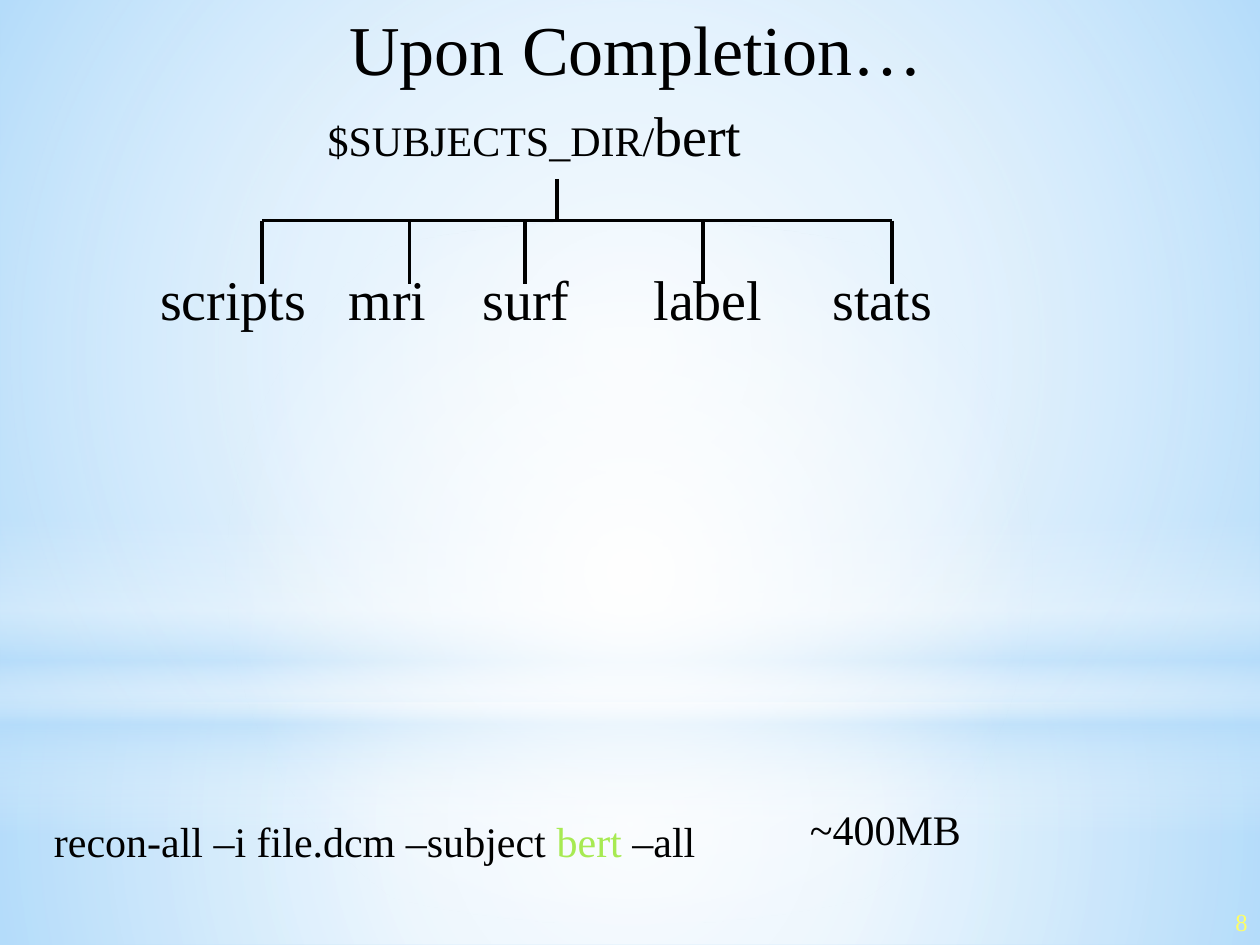
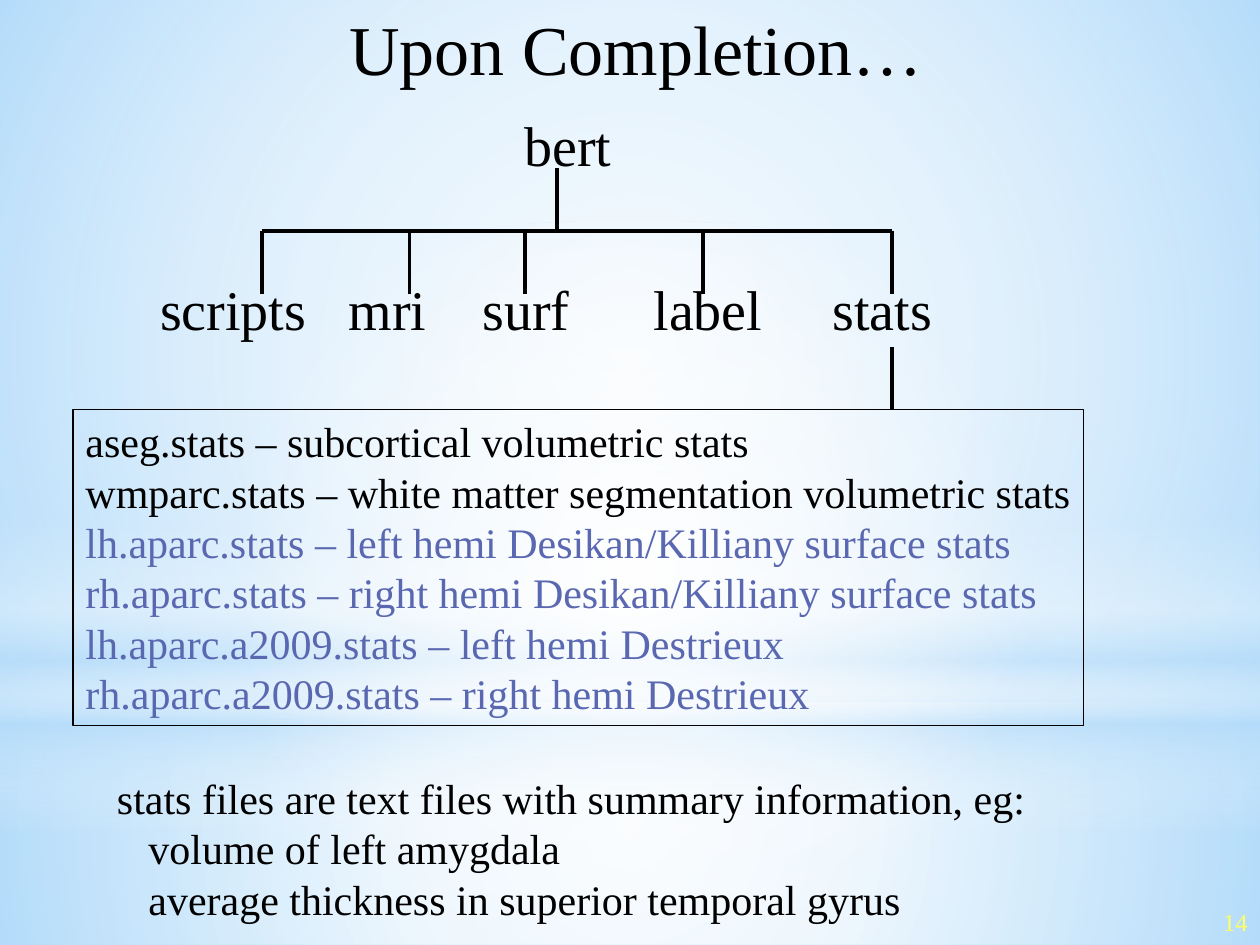
"""Build two slides that show the folder tree left by a completed reconstruction."""
from dataclasses import dataclass

import lxml.etree
import pptx
import pptx.dml.color
import pptx.enum.shapes
import pptx.enum.text
import pptx.oxml
import pptx.oxml.ns
import pptx.util

Inches = pptx.util.Inches
Shape = pptx.enum.shapes.MSO_SHAPE
Align = pptx.enum.text.PP_ALIGN
qn = pptx.oxml.ns.qn


@dataclass(frozen=True)
class Theme:
    font: str = "Times New Roman"
    ink: str = "000000"
    sky: str = "B4DCFA"
    white: str = "FFFFFF"
    subject: str = "A7EA52"
    surface: str = "5968B0"
    number: str = "FFFF66"
    title_size: int = 40
    folder_size: int = 32
    text_size: int = 24
    number_size: int = 14
    branch_width: float = 2.25
    frame_width: float = 0.75


theme = Theme()


def write(paragraph, *pieces, align=Align.LEFT):
    """Fill a paragraph with (text, size, colour) pieces."""
    paragraph.alignment = align
    paragraph.space_before = pptx.util.Pt(0)
    for text, size, colour in pieces:
        run = paragraph.add_run()
        run.text = text
        run.font.name = theme.font
        run.font.size = pptx.util.Pt(size)
        run.font.color.rgb = pptx.dml.color.RGBColor.from_string(colour)


def add_line(slide, x1, y1, x2, y2):
    """Draw one branch of the tree."""
    line = slide.shapes.add_connector(
        pptx.enum.shapes.MSO_CONNECTOR.STRAIGHT, Inches(x1), Inches(y1), Inches(x2), Inches(y2)
    )
    line.line.width = pptx.util.Pt(theme.branch_width)
    line.line.color.rgb = pptx.dml.color.RGBColor.from_string(theme.ink)
    lxml.etree.SubElement(line._element.spPr, qn("a:effectLst"))


presentation = pptx.Presentation()
presentation.slide_width = Inches(10)
presentation.slide_height = Inches(7.5)

master = presentation.slide_master
master.background.fill.solid()
master.background.fill.fore_color.rgb = pptx.dml.color.RGBColor.from_string(theme.sky)

radial = '<a:path path="circle"><a:fillToRect l="50000" t="50000" r="50000" b="50000"/></a:path>'
vertical = '<a:lin ang="5400000" scaled="0"/>'
white, sky = theme.white, theme.sky
backdrop = [
    (Shape.RECTANGLE, 5.58, 1.92, radial, [(0, white, 91), (37, white, 76), (100, sky, 79)]),
    (Shape.RECTANGLE, 0, 5.58, radial, [(0, white, 89), (48, white, 62), (100, sky, 79)]),
    (Shape.RECTANGLE, 4.12, 2.5, vertical,
     [(0, white, 0), (29, white, 30), (45, sky, 40), (55, white, 26), (65, sky, 60), (100, white, 0)]),
    (Shape.OVAL, 1.75, 5.58, radial, [(0, white, 100), (56, white, 0)]),
]

folders = ["scripts", "mri", "surf", "label", "stats"]
folder_indent = 1
extra_gap_points = [16, 24, 40, 32]
branch_xs = [2.08, 3.25, 4.17, 5.58, 7.08]
trunk_x = 4.42
drop = 0.5

trees = [
    {"number": "8", "body_top": 0.75, "root_indent": 2.33, "trunk_top": 1.42, "bar_y": 1.75,
     "root": [("$SUBJECTS_DIR/", theme.text_size, theme.ink), ("bert", theme.folder_size, theme.ink)]},
    {"number": "14", "body_top": 0.83, "root_indent": 3.89, "trunk_top": 1.33, "bar_y": 1.83,
     "root": [("bert", theme.folder_size, theme.ink)]},
]

slides = []
for tree in trees:
    slide = presentation.slides.add_slide(presentation.slide_layouts[1])
    slides.append(slide)

    number_box = slide.shapes.add_textbox(Inches(7.92), Inches(7.15), Inches(2.08), Inches(0.5))
    number_box.text_frame.word_wrap = True
    write(number_box.text_frame.paragraphs[0], (tree["number"], theme.number_size, theme.number),
          align=Align.RIGHT)

    title = slide.shapes.title
    title.left, title.top, title.width, title.height = map(Inches, (1.17, -0.25, 7.75, 1.25))
    title.text_frame.auto_size = pptx.enum.text.MSO_AUTO_SIZE.NONE
    title.text_frame.vertical_anchor = pptx.enum.text.MSO_ANCHOR.MIDDLE
    write(title.text_frame.paragraphs[0], ("Upon Completion…", theme.title_size, theme.ink),
          align=Align.CENTER)

    body = slide.placeholders[1]
    body.left, body.top, body.width, body.height = map(Inches, (0.17, tree["body_top"], 9.67, 3.74))
    body.text_frame.auto_size = pptx.enum.text.MSO_AUTO_SIZE.NONE
    root = body.text_frame.paragraphs[0]
    folder_row = body.text_frame.add_paragraph()
    for paragraph, indent in ((root, tree["root_indent"]), (folder_row, folder_indent)):
        properties = paragraph._p.get_or_add_pPr()
        properties.set("marL", str(Inches(indent)))
        properties.set("indent", "0")
        lxml.etree.SubElement(properties, qn("a:buNone"))
    write(root, *tree["root"])
    row_pieces = [(folders[0], theme.folder_size, theme.ink)]
    for folder in folders[1:]:
        row_pieces += [(" ", theme.folder_size, theme.ink), (folder, theme.folder_size, theme.ink)]
    write(folder_row, *row_pieces)
    folder_row.space_before = pptx.util.Pt(55)
    for gap, points in zip(folder_row.runs[1::2], extra_gap_points):
        gap._r.get_or_add_rPr().set("spc", str(points * 100))

    bar_y = tree["bar_y"]
    add_line(slide, trunk_x, tree["trunk_top"], trunk_x, bar_y)
    add_line(slide, branch_xs[0], bar_y, branch_xs[-1], bar_y)
    for x in branch_xs:
        add_line(slide, x, bar_y, x, bar_y + drop)

overview, stats_slide = slides

for layer, (kind, top, height, direction, stops) in enumerate(backdrop):
    panel = overview.shapes.add_shape(kind, 0, Inches(top), Inches(10), Inches(height))
    panel.shadow.inherit = False
    panel.line.fill.background()
    stop_xml = "".join(
        f'<a:gs pos="{position * 1000}"><a:srgbClr val="{colour}">'
        f'<a:alpha val="{alpha * 1000}"/></a:srgbClr></a:gs>'
        for position, colour, alpha in stops
    )
    gradient = pptx.oxml.parse_xml(
        f'<a:gradFill {pptx.oxml.ns.nsdecls("a")} rotWithShape="1">'
        f"<a:gsLst>{stop_xml}</a:gsLst>{direction}</a:gradFill>"
    )
    panel._element.spPr.find(qn("a:prstGeom")).addnext(gradient)
    master.shapes._spTree.insert(2 + layer, panel._element)

command = overview.shapes.add_textbox(Inches(0.33), Inches(6.42), Inches(5.58), Inches(0.51))
command.text_frame.word_wrap = True
write(command.text_frame.paragraphs[0],
      ("recon-all –i file.dcm –subject ", theme.text_size, theme.ink),
      ("bert ", theme.text_size, theme.subject),
      ("–all", theme.text_size, theme.ink))

disk_usage = overview.shapes.add_textbox(Inches(6.33), Inches(6.33), Inches(1.4), Inches(0.5))
disk_usage.text_frame.word_wrap = False
write(disk_usage.text_frame.paragraphs[0], ("~400MB", theme.text_size, theme.ink))

add_line(stats_slide, branch_xs[-1], 2.75, branch_xs[-1], 3.25)
stats_box = stats_slide.shapes.add_shape(
    Shape.RECTANGLE, Inches(0.58), Inches(3.25), Inches(8.02), Inches(2.51)
)
stats_box.shadow.inherit = False
stats_box.fill.background()
stats_box.line.width = pptx.util.Pt(theme.frame_width)
stats_box.line.color.rgb = pptx.dml.color.RGBColor.from_string(theme.ink)
stats_box.text_frame.vertical_anchor = pptx.enum.text.MSO_ANCHOR.TOP

notes_box = stats_slide.shapes.add_textbox(Inches(0.83), Inches(6.08), Inches(7.48), Inches(1.31))

stats_files = [
    ("aseg.stats – subcortical volumetric stats", theme.ink, 0),
    ("wmparc.stats – white matter segmentation volumetric stats", theme.ink, 0),
    ("lh.aparc.stats – left hemi Desikan/Killiany surface stats", theme.surface, 0),
    ("rh.aparc.stats – right hemi Desikan/Killiany surface stats", theme.surface, 0),
    ("lh.aparc.a2009.stats – left hemi Destrieux", theme.surface, 0),
    ("rh.aparc.a2009.stats – right hemi Destrieux", theme.surface, 0),
]
summary = [
    ("stats files are text files with summary information, eg:", theme.ink, 0),
    ("volume of left amygdala", theme.ink, 0.25),
    ("average thickness in superior temporal gyrus", theme.ink, 0.25),
]
for box, lines in ((stats_box, stats_files), (notes_box, summary)):
    frame = box.text_frame
    frame.word_wrap = False
    for index, (text, colour, indent) in enumerate(lines):
        paragraph = frame.add_paragraph() if index else frame.paragraphs[0]
        paragraph._p.get_or_add_pPr().set("marL", str(Inches(indent)))
        write(paragraph, (text, theme.text_size, colour))

presentation.save("out.pptx")
